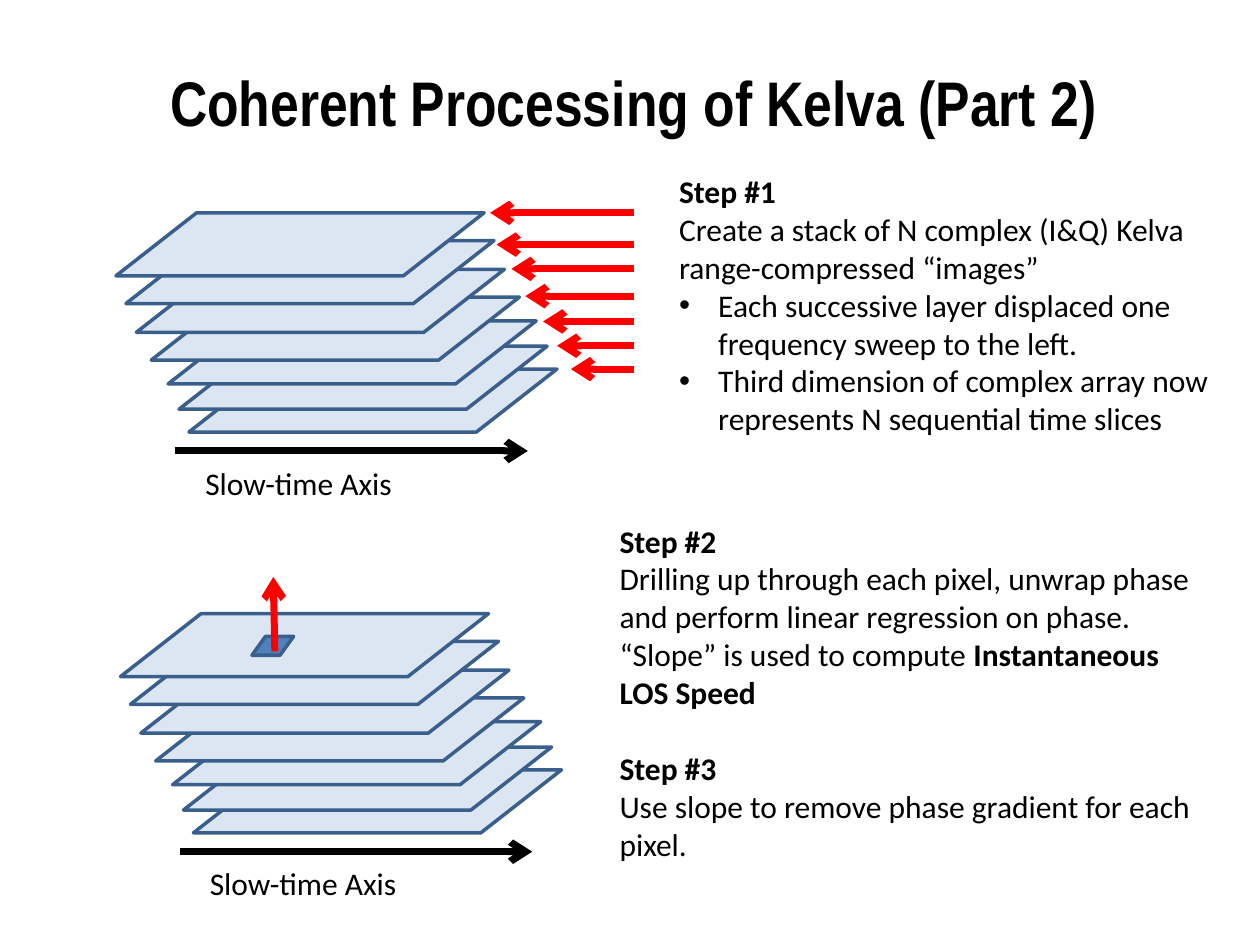
"""Build the slide on coherent processing with two layer stacks and three steps."""
from lxml import etree
from pptx import Presentation
from pptx import util as u
from pptx.dml.color import RGBColor
from pptx.enum import shapes, text
from pptx.oxml.ns import qn

COLORS = {"ink": "000000", "arrow": "FF0000", "layer": "DCE6F2",
          "edge": "3A5F8C", "pixel": "4F81BD"}

TITLE = [{"runs": [("Coherent Processing of Kelva (Part 2)", True)]}]
AXIS_LABEL = [{"runs": [("Slow-time Axis", False)]}]
STEP_ONE = [
    {"runs": [("Step #1", True)]},
    {"runs": [("Create a stack of N complex (I&Q) Kelva range-compressed “images”", False)]},
    {"runs": [("Each successive layer displaced one frequency sweep to the left.", False)],
     "bullet": True},
    {"runs": [("Third dimension of complex array now represents N sequential time slices", False)],
     "bullet": True},
]
STEPS_TWO_THREE = [
    {"runs": [("Step #2", True)]},
    {"runs": [("Drilling up through each pixel, unwrap phase and perform linear "
               "regression on phase.", False)]},
    {"runs": [("“Slope” is used to compute ", False), ("Instantaneous LOS Speed", True)]},
    {"runs": [("Step #3", True)], "before": 22},
    {"runs": [("Use slope to remove phase gradient for each pixel.", False)]},
]

STACK_ORIGINS = [(2.34, 4.29), (2.43, 12.37)]
LAYER_SIZE = (7.42, 1.27)
LAYER_OFFSETS = [(0, 0), (0.2, 0.56), (0.41, 1.14), (0.71, 1.7),
                 (1.05, 2.18), (1.27, 2.69), (1.47, 3.15)]
SWEEP_START = 12.78
SWEEP_TIPS = [(9.88, 4.29), (10.01, 4.93), (10.31, 5.42), (10.59, 5.97),
              (10.95, 6.48), (11.23, 6.97), (11.51, 7.44)]


def color(name):
    return RGBColor.from_string(COLORS[name])


def add_text(page, paragraphs, left, top, width, height, font="Calibri", size=18,
             align=text.PP_ALIGN.LEFT, anchor=text.MSO_ANCHOR.TOP):
    box = page.shapes.add_textbox(u.Cm(left), u.Cm(top), u.Cm(width), u.Cm(height))
    frame = box.text_frame
    frame.word_wrap = True
    frame.vertical_anchor = anchor
    for index, item in enumerate(paragraphs):
        para = frame.paragraphs[0] if index == 0 else frame.add_paragraph()
        para.alignment = align
        para.space_before = u.Pt(item.get("before", 0))
        if item.get("bullet"):
            properties = para._p.get_or_add_pPr()
            properties.set("marL", str(u.Cm(0.79)))
            properties.set("indent", str(-u.Cm(0.79)))
            etree.SubElement(properties, qn("a:buFont"), typeface="Arial")
            etree.SubElement(properties, qn("a:buChar"), char="•")
        for words, bold in item["runs"]:
            span = para.add_run()
            span.text = words
            span.font.name = font
            span.font.size = u.Pt(size)
            span.font.bold = bold
            span.font.color.rgb = color("ink")


def add_arrow(page, start, end, shade):
    points = [u.Cm(value) for value in (*start, *end)]
    arrow = page.shapes.add_connector(shapes.MSO_CONNECTOR.STRAIGHT, *points)
    arrow.line.color.rgb = color(shade)
    arrow.line.width = u.Pt(4)
    etree.SubElement(arrow.line._get_or_add_ln(), qn("a:tailEnd"), type="arrow")
    etree.SubElement(arrow._element.spPr, qn("a:effectLst"))


def add_sheet(page, left, top, size, slant, shade):
    sheet = page.shapes.add_shape(shapes.MSO_SHAPE.PARALLELOGRAM, u.Cm(left), u.Cm(top),
                                  u.Cm(size[0]), u.Cm(size[1]))
    sheet.adjustments[0] = slant
    sheet.shadow.inherit = False
    sheet.fill.solid()
    sheet.fill.fore_color.rgb = color(shade)
    sheet.line.color.rgb = color("edge")
    sheet.line.width = u.Pt(2)


def add_stack(page, left, top):
    for right, down in reversed(LAYER_OFFSETS):
        add_sheet(page, left + right, top + down, LAYER_SIZE, 1.28, "layer")
    axis = top + 4.8
    add_arrow(page, (left + 1.19, axis), (left + 8.3, axis), "ink")
    add_text(page, AXIS_LABEL, left + 1.55, top + 4.93, 7.06, 1.02)


def main():
    deck = Presentation()
    deck.slide_width, deck.slide_height = u.Cm(25.4), u.Cm(19.05)
    page = deck.slides.add_slide(deck.slide_layouts[6])
    add_text(page, TITLE, 1.98, 0, 21.59, 4.09, font="Arial Narrow", size=36,
             align=text.PP_ALIGN.CENTER, anchor=text.MSO_ANCHOR.MIDDLE)
    for tip in SWEEP_TIPS:
        add_arrow(page, (SWEEP_START, tip[1]), tip, "arrow")
    for origin in STACK_ORIGINS:
        add_stack(page, *origin)
    add_sheet(page, 5.08, 12.83, (0.84, 0.38), 0.72, "pixel")
    add_arrow(page, (5.54, 13.13), (5.51, 11.63), "arrow")
    add_text(page, STEP_ONE, 13.44, 3.35, 11.23, 5.64)
    add_text(page, STEPS_TWO_THREE, 12.24, 10.39, 12.32, 7.19)
    deck.save("out.pptx")


if __name__ == "__main__":
    main()
